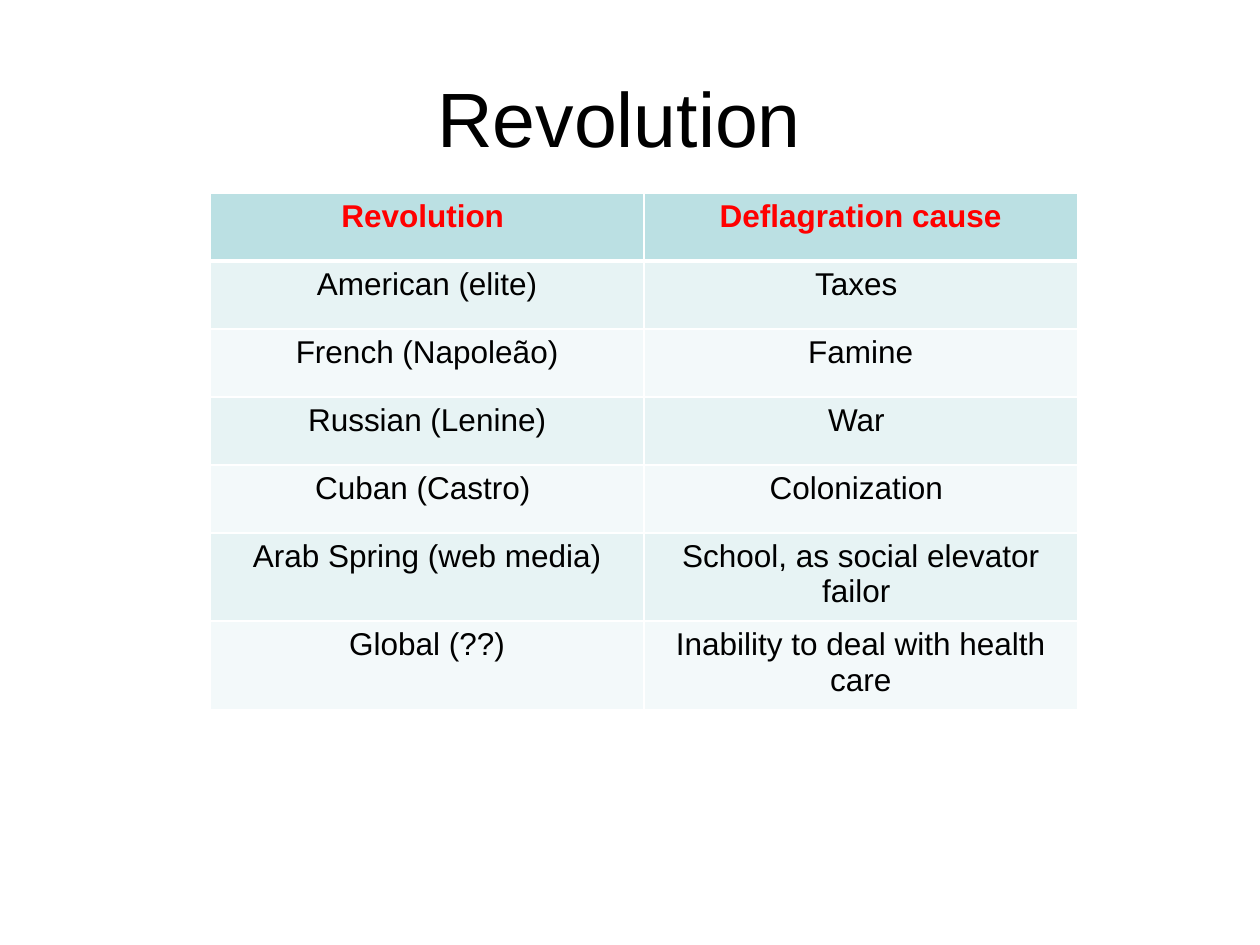
"""Build a slide with a table of revolutions and what set them off."""
from dataclasses import dataclass

from lxml.etree import SubElement
from pptx import Presentation
from pptx.dml.color import RGBColor as Rgb
from pptx.enum.text import MSO_ANCHOR as Anchor, PP_ALIGN as Align
from pptx.oxml.ns import qn
from pptx.util import Cm, Pt

TITLE = "Revolution "
ROWS = [
    ("Revolution ", "Deflagration cause"),
    ("American (elite)", "Taxes "),
    ("French (Napoleão)", "Famine"),
    ("Russian (Lenine)", "War "),
    ("Cuban (Castro) ", "Colonization "),
    ("Arab Spring (web media)", "School, as social elevator failor "),
    ("Global (??)", "Inability to deal with health care"),
]


@dataclass(frozen=True)
class Theme:
    font: str = "Arial"
    text: str = "000000"
    accent: str = "FF0000"
    header: str = "BBE0E3"
    bands: tuple = ("F3F9FA", "E7F3F4")
    border: str = "FFFFFF"
    title_size: int = 44
    cell_size: int = 18
    thin: int = 1
    thick: int = 3


THEME = Theme()
COLUMN_WIDTH, ROW_HEIGHT = 8.74, 1.37


def write(frame, text, size=THEME.cell_size, color=THEME.text, bold=False):
    para = frame.paragraphs[0]
    para.alignment = Align.CENTER
    span = para.add_run()
    span.text = text
    span.font.name = THEME.font
    span.font.size = Pt(size)
    span.font.bold = bold
    span.font.color.rgb = Rgb.from_string(color)


def add_borders(cell, **widths):
    properties = cell._tc.get_or_add_tcPr()
    for side in "LRTB":
        width = Pt(widths.get(side, THEME.thin))
        line = SubElement(properties, qn(f"a:ln{side}"), w=str(width))
        fill = SubElement(line, qn("a:solidFill"))
        SubElement(fill, qn("a:srgbClr"), val=THEME.border)


def add_title(page):
    box = page.shapes.add_textbox(Cm(1.27), Cm(0.76), Cm(22.86), Cm(3.18))
    box.text_frame.word_wrap = True
    box.text_frame.vertical_anchor = Anchor.MIDDLE
    write(box.text_frame, TITLE, size=THEME.title_size)


def add_causes(page):
    row_count, column_count = len(ROWS), len(ROWS[0])
    table = page.shapes.add_table(
        row_count, column_count, Cm(4.24), Cm(3.89),
        Cm(COLUMN_WIDTH * column_count), Cm(ROW_HEIGHT * row_count),
    ).table
    for column in table.columns:
        column.width = Cm(COLUMN_WIDTH)
    for index, texts in enumerate(ROWS):
        table.rows[index].height = Cm(ROW_HEIGHT)
        is_header = index == 0
        shade = THEME.header if is_header else THEME.bands[index % 2]
        widths = {0: {"B": THEME.thick}, 1: {"T": THEME.thick}}.get(index, {})
        for cell, text in zip(table.rows[index].cells, texts):
            add_borders(cell, **widths)
            cell.fill.solid()
            cell.fill.fore_color.rgb = Rgb.from_string(shade)
            color = THEME.accent if is_header else THEME.text
            write(cell.text_frame, text, color=color, bold=is_header)


def main():
    deck = Presentation()
    deck.slide_width, deck.slide_height = Cm(25.4), Cm(19.05)
    page = deck.slides.add_slide(deck.slide_layouts[6])
    add_title(page)
    add_causes(page)
    deck.save("out.pptx")


if __name__ == "__main__":
    main()
